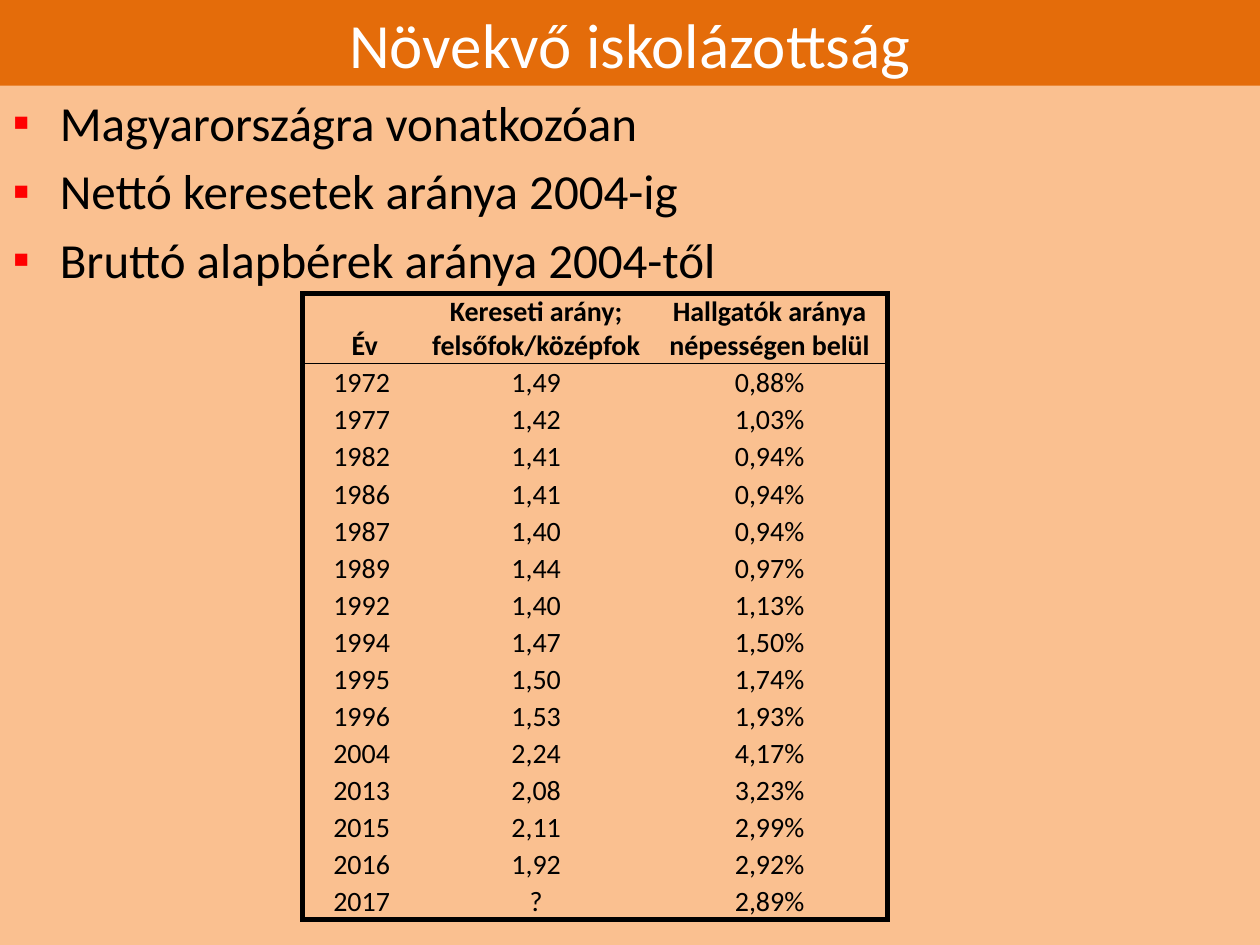
from dataclasses import dataclass

from lxml import etree
from pptx import Presentation
from pptx.dml.color import RGBColor
from pptx.enum.text import MSO_ANCHOR, MSO_AUTO_SIZE, PP_ALIGN
from pptx.oxml.ns import qn
from pptx.util import Pt

CENTER = PP_ALIGN.CENTER
MIDDLE, BOTTOM, TOP = MSO_ANCHOR.MIDDLE, MSO_ANCHOR.BOTTOM, MSO_ANCHOR.TOP
NO_FIT = MSO_AUTO_SIZE.NONE

FONT = "Calibri"
COLORS = {
    "background": "FAC090",
    "title_bar": "E46C0A",
    "title_text": "FFFFFF",
    "text": "000000",
    "bullet": "FF0000",
}
PAGE_WIDTH, PAGE_HEIGHT, TITLE_HEIGHT = 720, 540, 49
INDENT = 27
OUTER_LINE, HEADER_LINE = 3, 1


@dataclass
class Style:
    size: float
    color: str
    bold: bool = False


@dataclass
class Ratio:
    year: str
    earnings: str
    students: str

    def texts(self) -> list[str]:
        return [self.year, self.earnings, self.students]


TITLE_STYLE = Style(36, "title_text")
BODY_STYLE = Style(28, "text")
HEADER_STYLE = Style(16, "text", True)
CELL_STYLE = Style(16, "text")

BULLETS = [
    "Magyarországra vonatkozóan",
    "Nettó keresetek aránya 2004-ig",
    "Bruttó alapbérek aránya 2004-től",
]
COLUMN_WIDTHS = [67.7, 131.8, 135]
HEADER_HEIGHT, ROW_HEIGHT = 39, 21.2
RATIOS = [
    Ratio(" Év", "Kereseti arány; felsőfok/középfok", "Hallgatók aránya népességen belül"),
    Ratio("1972", "1,49", "0,88%"),
    Ratio("1977", "1,42", "1,03%"),
    Ratio("1982", "1,41", "0,94%"),
    Ratio("1986", "1,41", "0,94%"),
    Ratio("1987", "1,40", "0,94%"),
    Ratio("1989", "1,44", "0,97%"),
    Ratio("1992", "1,40", "1,13%"),
    Ratio("1994", "1,47", "1,50%"),
    Ratio("1995", "1,50", "1,74%"),
    Ratio("1996", "1,53", "1,93%"),
    Ratio("2004", "2,24", "4,17%"),
    Ratio("2013", "2,08", "3,23%"),
    Ratio("2015", "2,11", "2,99%"),
    Ratio("2016", "1,92", "2,92%"),
    Ratio("2017", "?", "2,89%"),
]


def color(name: str) -> RGBColor:
    return RGBColor.from_string(COLORS[name])


def add_span(para, text: str, style: Style) -> None:
    span = para.add_run()
    span.text = text
    span.font.name = FONT
    span.font.size = Pt(style.size)
    span.font.bold = style.bold
    span.font.color.rgb = color(style.color)


def place(box, top: float, height: float, anchor) -> None:
    box.left, box.top = Pt(0), Pt(top)
    box.width, box.height = Pt(PAGE_WIDTH), Pt(height)
    box.text_frame.word_wrap = True
    box.text_frame.auto_size = NO_FIT
    box.text_frame.vertical_anchor = anchor


def set_bullet(para) -> None:
    properties = para._p.get_or_add_pPr()
    properties.set("marL", str(Pt(INDENT)))
    properties.set("indent", str(-Pt(INDENT)))
    bullet_color = etree.SubElement(properties, qn("a:buClr"))
    etree.SubElement(bullet_color, qn("a:srgbClr"), val=COLORS["bullet"])
    etree.SubElement(properties, qn("a:buFont"), typeface="Arial")
    etree.SubElement(properties, qn("a:buChar"), char="▪")


def set_borders(cell, widths: dict[str, float]) -> None:
    properties = cell._tc.get_or_add_tcPr()
    for position, (side, width) in enumerate(widths.items()):
        line = etree.Element(qn(f"a:ln{side}"), w=str(Pt(width)))
        if width:
            fill = etree.SubElement(line, qn("a:solidFill"))
            etree.SubElement(fill, qn("a:srgbClr"), val=COLORS["text"])
        else:
            etree.SubElement(line, qn("a:noFill"))
        properties.insert(position, line)


def fill_cell(cell, text: str, style: Style) -> None:
    cell.margin_left = cell.margin_right = cell.margin_top = Pt(0.7)
    cell.margin_bottom = Pt(0)
    cell.vertical_anchor = BOTTOM
    cell.fill.background()
    para = cell.text_frame.paragraphs[0]
    para.alignment = CENTER
    add_span(para, text, style)


def add_ratio_table(page) -> None:
    last_row, last_column = len(RATIOS) - 1, len(COLUMN_WIDTHS) - 1
    height = HEADER_HEIGHT + ROW_HEIGHT * last_row
    table = page.shapes.add_table(
        len(RATIOS), len(COLUMN_WIDTHS),
        Pt(172.8), Pt(167.8), Pt(sum(COLUMN_WIDTHS)), Pt(height),
    ).table
    table.first_row = table.horz_banding = False
    for column, width in zip(table.columns, COLUMN_WIDTHS):
        column.width = Pt(width)
    for i, ratio in enumerate(RATIOS):
        table.rows[i].height = Pt(ROW_HEIGHT if i else HEADER_HEIGHT)
        for j, text in enumerate(ratio.texts()):
            cell = table.cell(i, j)
            fill_cell(cell, text, CELL_STYLE if i else HEADER_STYLE)
            set_borders(cell, {
                "L": OUTER_LINE if j == 0 else 0,
                "R": OUTER_LINE if j == last_column else 0,
                "T": {0: OUTER_LINE, 1: HEADER_LINE}.get(i, 0),
                "B": {0: HEADER_LINE, last_row: OUTER_LINE}.get(i, 0),
            })


def main() -> None:
    deck = Presentation()
    deck.slide_width, deck.slide_height = Pt(PAGE_WIDTH), Pt(PAGE_HEIGHT)
    page = deck.slides.add_slide(deck.slide_layouts[1])
    page.background.fill.solid()
    page.background.fill.fore_color.rgb = color("background")

    title = page.shapes.title
    place(title, 0, TITLE_HEIGHT, MIDDLE)
    title.fill.solid()
    title.fill.fore_color.rgb = color("title_bar")
    heading = title.text_frame.paragraphs[0]
    heading.alignment = CENTER
    add_span(heading, "Növekvő iskolázottság", TITLE_STYLE)

    body = page.placeholders[1]
    place(body, TITLE_HEIGHT, PAGE_HEIGHT - TITLE_HEIGHT, TOP)
    for i, text in enumerate(BULLETS):
        frame = body.text_frame
        para = frame.add_paragraph() if i else frame.paragraphs[0]
        set_bullet(para)
        add_span(para, text, BODY_STYLE)

    add_ratio_table(page)
    deck.save("out.pptx")


if __name__ == "__main__":
    main()
